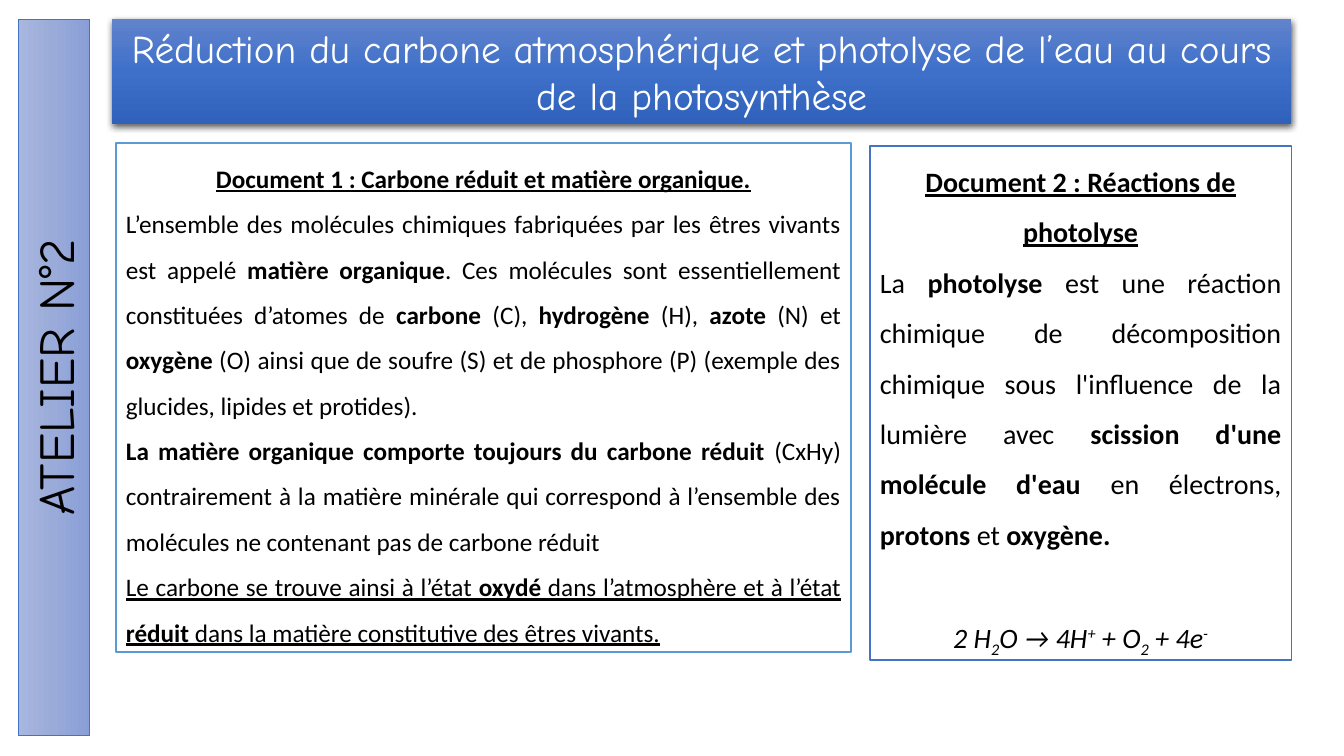
import copy

import lxml.etree
import pptx
import pptx.dml.color
import pptx.enum.shapes
import pptx.enum.text
import pptx.oxml.ns
import pptx.util

COLORS = {
    "white": "FFFFFF", "black": "000000",
    "document 1": "5B9BD5", "document 2": "4472C4", "sidebar line": "4472C4",
}
TITLE_GRADIENT = ("6183CB", "3E70CA", "3062BB")
SIDEBAR_GRADIENT = ("A8B7DF", "9AABD9", "889ED7")
CENTER = pptx.enum.text.PP_ALIGN.CENTER
JUSTIFY = pptx.enum.text.PP_ALIGN.JUSTIFY
SUBSCRIPT, SUPERSCRIPT = -25000, 30000


def rgb(value):
    return pptx.dml.color.RGBColor.from_string(value)


class SlideBuilder:
    """Draws on one slide; lengths are percentages of the slide's size."""

    heading_font = "Comic Neue"
    body_font = "Calibri"

    def __init__(self, presentation):
        self.width = presentation.slide_width
        self.height = presentation.slide_height
        self.slide = presentation.slides.add_slide(presentation.slide_layouts[6])

    def box(self, left, top, width, height, line=None, line_width=1.0, upward=False):
        x, y = self.width * left / 100, self.height * top / 100
        w, h = self.width * width / 100, self.height * height / 100
        if upward:  # swap the sides around the centre, then turn
            x, y, w, h = x + (w - h) / 2, y + (h - w) / 2, h, w
        shape = self.slide.shapes.add_shape(
            pptx.enum.shapes.MSO_SHAPE.RECTANGLE, *map(int, (x, y, w, h)))
        shape.rotation = 270 if upward else 0
        shape.shadow.inherit = False
        if line:
            shape.line.color.rgb = rgb(COLORS[line])
            shape.line.width = pptx.util.Pt(line_width)
        else:
            shape.line.fill.background()
        shape.text_frame.word_wrap = True
        shape.text_frame.auto_size = pptx.enum.text.MSO_AUTO_SIZE.SHAPE_TO_FIT_TEXT
        return shape

    def gradient(self, shape, colors):
        shape.fill.gradient()
        shape.fill.gradient_angle = 270
        stop_list = shape._element.spPr.find(".//" + pptx.oxml.ns.qn("a:gsLst"))
        stop_list.insert(1, copy.deepcopy(stop_list[0]))
        for index, (stop, color) in enumerate(zip(shape.fill.gradient_stops, colors)):
            stop.position = index / (len(colors) - 1)
            stop.color.rgb = rgb(color)

    def drop_shadow(self, shape):
        qn = pptx.oxml.ns.qn
        effects = shape._element.spPr.find(qn("a:effectLst"))
        shadow = lxml.etree.SubElement(
            effects, qn("a:outerShdw"), blurRad="57150", dist="19050",
            dir="5400000", algn="ctr", rotWithShape="0")
        color = lxml.etree.SubElement(shadow, qn("a:srgbClr"), val=COLORS["black"])
        lxml.etree.SubElement(color, qn("a:alpha"), val="63000")

    def style(self, paragraph, size, font, color="black", alignment=CENTER):
        paragraph.alignment = alignment
        paragraph.font.size = pptx.util.Pt(size)
        paragraph.font.name = font
        paragraph.font.color.rgb = rgb(COLORS[color])

    def heading(self, shape, text, size, color):
        paragraph = shape.text_frame.paragraphs[0]
        paragraph.text = text
        self.style(paragraph, size, self.heading_font, color)

    def document(self, area, line, size, title, texts):
        """Framed text; asterisks enclose bold words, texts are (text, underline)."""
        shape = self.box(*area, line=line)
        shape.fill.solid()
        shape.fill.fore_color.rgb = rgb(COLORS["white"])
        frame = shape.text_frame
        self.rich_paragraph(frame.paragraphs[0], f"*{title}*", size, True, CENTER)
        for text, underline in texts:
            self.rich_paragraph(frame.add_paragraph(), text, size, underline, JUSTIFY)
        return frame

    def rich_paragraph(self, paragraph, text, size, underline, alignment):
        paragraph.line_spacing = 1.5
        self.style(paragraph, size, self.body_font, alignment=alignment)
        paragraph.font.underline = underline
        for index, part in enumerate(text.split("*")):
            if part:
                run = paragraph.add_run()
                run.text = part
                run.font.bold = index % 2 == 1

    def equation(self, frame, parts, size, space_before):
        paragraph = frame.add_paragraph()
        paragraph.line_spacing = 1.5
        paragraph.space_before = pptx.util.Pt(space_before)
        self.style(paragraph, size, self.body_font)
        paragraph.font.italic = True
        for text, baseline in parts:
            run = paragraph.add_run()
            run.text = text
            if baseline:
                run._r.get_or_add_rPr().set("baseline", str(baseline))


def main():
    presentation = pptx.Presentation()
    presentation.slide_width = pptx.util.Inches(13.33)
    presentation.slide_height = pptx.util.Inches(7.5)
    builder = SlideBuilder(presentation)

    # Documents
    builder.document(
        (8.63, 18.93, 54.68, 67.33), "document 1", 18,
        "Document 1 : Carbone réduit et matière organique.",
        [
            ("L’ensemble des molécules chimiques fabriquées par les êtres vivants est "
             "appelé *matière organique*. Ces molécules sont essentiellement constituées "
             "d’atomes de *carbone* (C), *hydrogène* (H), *azote* (N) et *oxygène* (O) "
             "ainsi que de soufre (S) et de phosphore (P) (exemple des glucides, "
             "lipides et protides). ", False),
            ("*La matière organique comporte toujours du carbone réduit *(CxHy) "
             "contrairement à la matière minérale qui correspond à l’ensemble des "
             "molécules ne contenant pas de carbone réduit", False),
            ("Le carbone se trouve ainsi à l’état *oxydé* dans l’atmosphère et à l’état "
             "*réduit* dans la matière constitutive des êtres vivants.", True),
        ])
    photolysis = builder.document(
        (64.73, 19.33, 31.35, 68), "document 2", 20,
        "Document 2 : Réactions de photolyse",
        [("La *photolyse* est une réaction chimique de décomposition chimique sous "
          "l'influence de la lumière avec *scission d'une molécule d'eau *en électrons, "
          "*protons* et *oxygène.*", False)])
    builder.equation(
        photolysis,
        [("2 H", 0), ("2", SUBSCRIPT), ("O → 4H", 0), ("+", SUPERSCRIPT),
         (" + O", 0), ("2", SUBSCRIPT), (" + 4e", 0), ("-", SUPERSCRIPT)],
        size=20, space_before=36)

    # Title banner
    banner = builder.box(8.33, 2.53, 87.75, 13.87)
    builder.gradient(banner, TITLE_GRADIENT)
    builder.drop_shadow(banner)
    builder.heading(
        banner, "Réduction du carbone atmosphérique et photolyse de l’eau au cours "
        "de la photosynthèse", 28, "white")

    # Workshop sidebar
    sidebar = builder.box(1.35, 2.53, 5.33, 94.8, "sidebar line", 0.5, upward=True)
    builder.gradient(sidebar, SIDEBAR_GRADIENT)
    builder.heading(sidebar, "ATELIER N°2", 36, "black")

    presentation.save("out.pptx")


if __name__ == "__main__":
    main()
